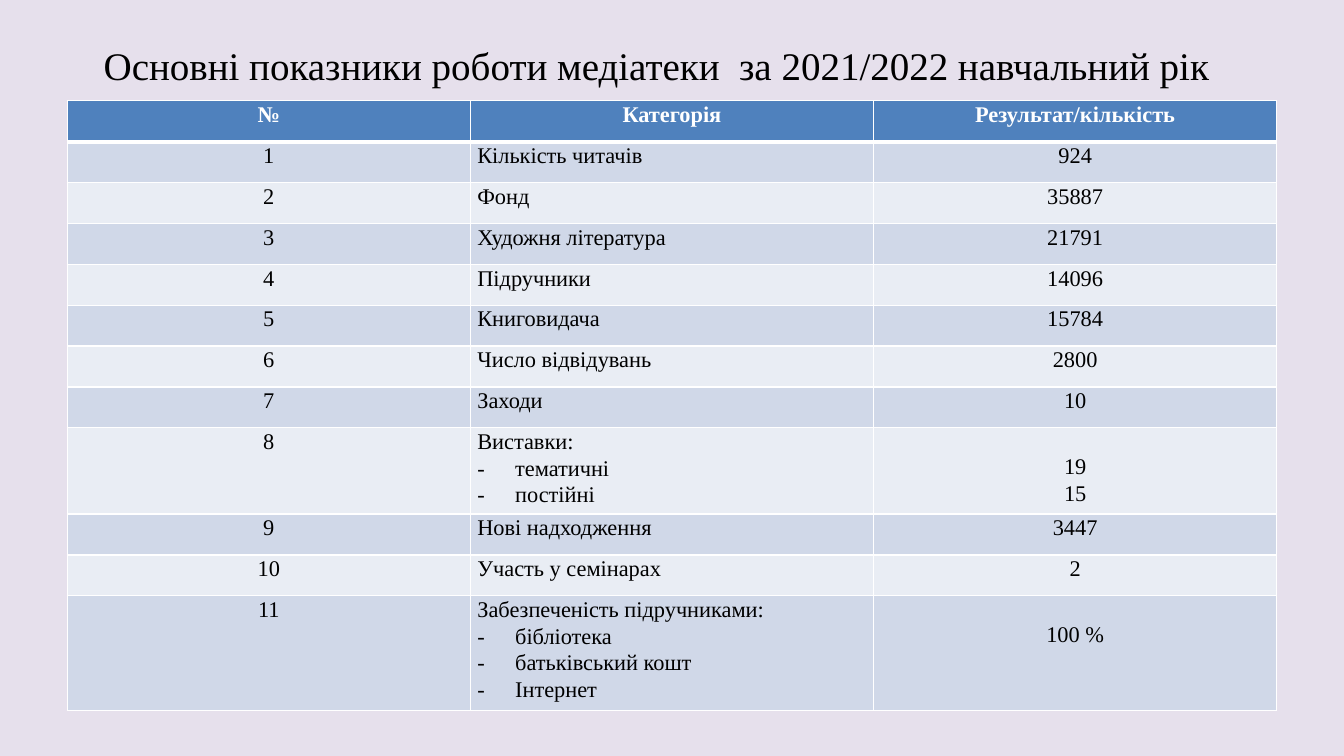
"""Build the slide with the yearly media library figures."""
from lxml import etree
from pptx import Presentation
from pptx import util as u
from pptx.dml import color
from pptx.enum import text
from pptx.oxml import ns

COLOURS = {"page": "E6E0EC", "header": "4F81BD", "odd": "D0D8E8",
           "even": "E9EDF4", "white": "FFFFFF", "black": "000000"}
TITLE = "Основні показники роботи медіатеки  за 2021/2022 навчальний рік"
HEADER = ("№", "Категорія", "Результат/кількість")
INDICATORS = [
    (["Кількість читачів"], ["924"]),
    (["Фонд"], ["35887"]),
    (["Художня література"], ["21791"]),
    (["Підручники"], ["14096"]),
    (["Книговидача"], ["15784"]),
    (["Число відвідувань"], ["2800"]),
    (["Заходи"], ["10"]),
    (["Виставки:", "тематичні", "постійні"], ["19", "15"]),
    (["Нові надходження"], ["3447"]),
    (["Участь у семінарах"], ["2"]),
    (["Забезпеченість підручниками:", "бібліотека", "батьківський кошт", "Інтернет"],
     ["100 %"]),
]
ROW_HEIGHTS = {1: 29.2, 3: 56.8, 4: 75.8}
CENTER, LEFT = text.PP_ALIGN.CENTER, text.PP_ALIGN.LEFT


def apply(target, values):
    for name, value in values.items():
        setattr(target, name, value)


class SlideBuilder:
    def __init__(self, deck, font):
        self.font = font
        self.page = deck.slides.add_slide(deck.slide_layouts[6])
        self.paint(self.page.background, "page")

    def paint(self, target, colour):
        target.fill.solid()
        target.fill.fore_color.rgb = color.RGBColor.from_string(COLOURS[colour])

    def add_words(self, para, words, size, colour="black", bold=False, **layout):
        apply(para, layout)
        span = para.add_run()
        span.text = words
        apply(span.font, {"name": self.font, "size": u.Pt(size), "bold": bold})
        span.font.color.rgb = color.RGBColor.from_string(COLOURS[colour])

    def title(self, words, left, top, width, height):
        box = self.page.shapes.add_textbox(u.Pt(left), u.Pt(top), u.Pt(width), u.Pt(height))
        apply(box.text_frame, {
            "word_wrap": True, "vertical_anchor": text.MSO_ANCHOR.MIDDLE,
            "margin_left": u.Pt(15), "margin_right": u.Pt(7),
            "margin_top": u.Pt(17), "margin_bottom": u.Pt(3)})
        self.add_words(box.text_frame.paragraphs[0], words, 27.9, alignment=CENTER)

    def table(self, rows, left, top, width, heights):
        frame = self.page.shapes.add_table(len(rows), len(rows[0]), u.Pt(left), u.Pt(top),
                                           u.Pt(width), u.Pt(sum(heights)))
        for row, height in zip(frame.table.rows, heights):
            row.height = u.Pt(height)
        for r, row in enumerate(rows):
            for c, lines in enumerate(row):
                self.cell(frame.table.cell(r, c), lines, r, c)

    def cell(self, cell, lines, row, column):
        head = row == 0
        drop = 18 if column == 2 and row and len(INDICATORS[row - 1][0]) > 1 else 0
        apply(cell, {"margin_left": u.Pt(5), "margin_right": u.Pt(5),
                     "margin_top": u.Pt(drop), "margin_bottom": 0})
        self.borders(cell, {"L": 1, "R": 1, "T": 3 if row == 1 else 1, "B": 3 if head else 1})
        self.paint(cell, "header" if head else "odd" if row % 2 else "even")
        align = LEFT if column == 1 and not head else CENTER
        for i, words in enumerate(lines):
            para = cell.text_frame.add_paragraph() if i else cell.text_frame.paragraphs[0]
            self.add_words(para, words, 16, "white" if head else "black", head,
                           alignment=align, line_spacing=1.07)
            if i and column == 1:
                self.bullet(para, "-", 27)

    def bullet(self, para, char, indent):
        props = para._p.get_or_add_pPr()
        props.set("marL", str(u.Pt(indent)))
        props.set("indent", str(-u.Pt(indent)))
        etree.SubElement(props, ns.qn("a:buFont")).set("typeface", self.font)
        etree.SubElement(props, ns.qn("a:buChar")).set("char", char)

    def borders(self, cell, widths):
        props = cell._tc.get_or_add_tcPr()
        for side, width in widths.items():
            line = etree.SubElement(props, ns.qn(f"a:ln{side}"), w=str(u.Pt(width)))
            fill = etree.SubElement(line, ns.qn("a:solidFill"))
            etree.SubElement(fill, ns.qn("a:srgbClr"), val=COLOURS["white"])


def main():
    deck = Presentation()
    apply(deck, {"slide_width": u.Pt(960), "slide_height": u.Pt(540)})
    slide = SlideBuilder(deck, "Times New Roman")
    slide.title(TITLE, 48, 12, 834, 54)
    rows = [[[name] for name in HEADER]]
    rows += [[[str(n)], names, values] for n, (names, values) in enumerate(INDICATORS, 1)]
    slide.table(rows, 48, 72, 864, [ROW_HEIGHTS[len(row[1])] for row in rows])
    deck.save("out.pptx")


if __name__ == "__main__":
    main()
